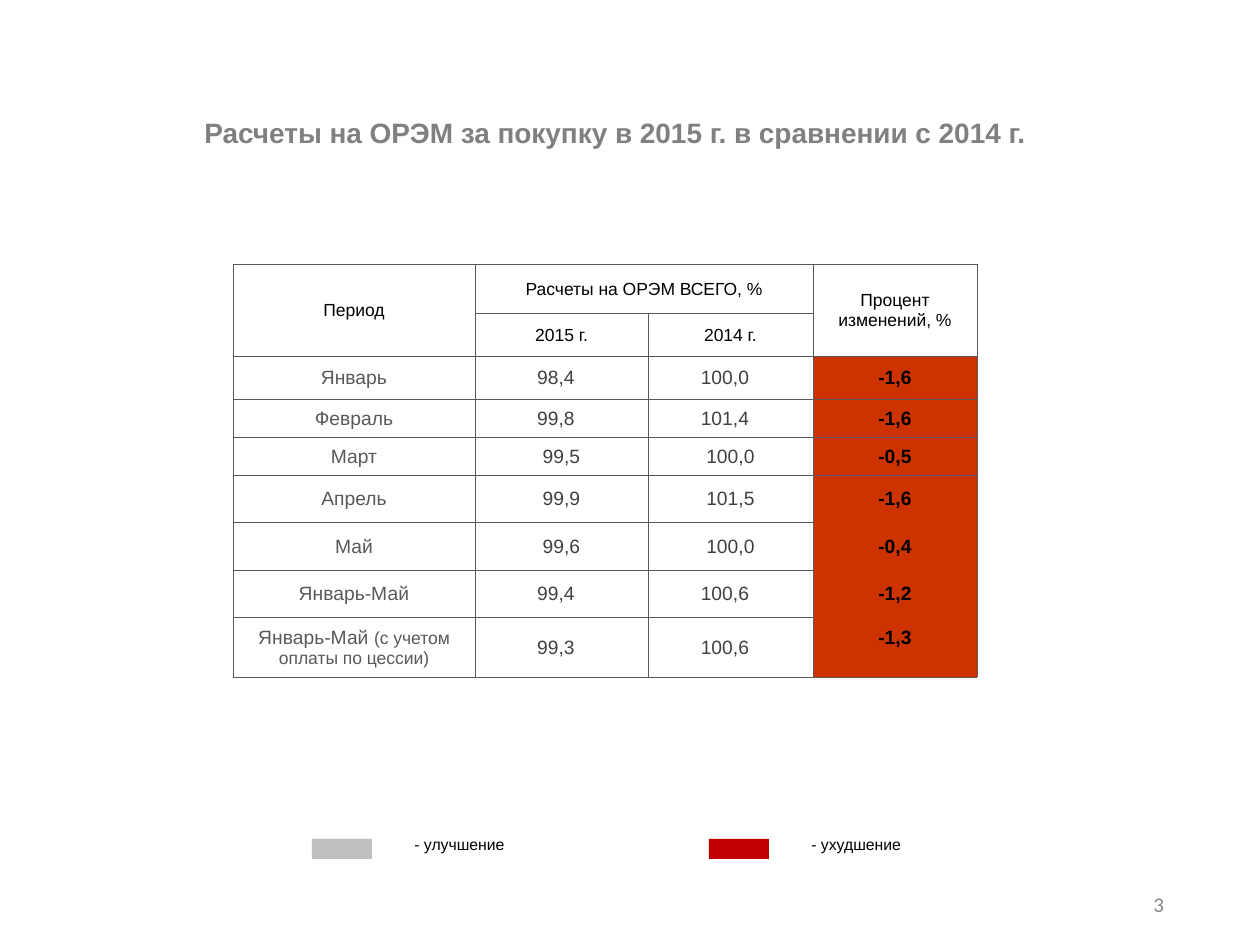
"""Build a slide comparing market purchase payments in 2015 and 2014."""
from dataclasses import dataclass
from lxml.etree import SubElement
from pptx import Presentation
from pptx.dml.color import RGBColor as RGB
from pptx.enum.shapes import MSO_SHAPE as SHAPE
from pptx.enum.text import MSO_ANCHOR as ANCHOR, PP_ALIGN as ALIGN
from pptx.oxml.ns import qn
from pptx.util import Emu, Pt

TITLE = "Расчеты на ОРЭМ за покупку в 2015 г. в сравнении с 2014 г."
NUMBER = "3"
HEADS = [
    ("Период", 0, 0, 1, 0),
    ("Расчеты на ОРЭМ ВСЕГО, %", 0, 1, 0, 2),
    ("Процент изменений, %", 0, 3, 1, 3),
    ("2015 г.", 1, 1, 1, 1),
    ("2014 г.", 1, 2, 1, 2),
]
ROWS = [
    ("Январь", "98,4", "100,0", "-1,6"),
    ("Февраль", "99,8", "101,4", "-1,6"),
    ("Март", "99,5", "100,0", "-0,5"),
    ("Апрель", "99,9", "101,5", "-1,6"),
    ("Май", "99,6", "100,0", "-0,4"),
    ("Январь-Май", "99,4", "100,6", "-1,2"),
    ("Январь-Май ", "99,3", "100,6", "-1,3"),
]
NOTE = "(с учетом оплаты по цессии)"
CENTRED = {"Март", "Апрель", "Май"}
LEGEND = [("- улучшение", 312, "BFBFBF"), ("- ухудшение", 709, "C00000")]
WIDTHS = [242, 173, 165, 164]
HEIGHTS = [49, 42, 43, 38, 38, 47, 48, 47, 60]
LEFT, TOP = 233, 264
OPEN = {(0, 0, "B"), (1, 0, "T"), (0, 3, "B"), (1, 3, "T"),
        (0, 1, "R"), (0, 2, "L")}
OPEN |= {(row, 3, "B") for row in (5, 6, 7)}
OPEN |= {(row, 3, "T") for row in (6, 7, 8)}


@dataclass(frozen=True)
class Theme:
    font: str = "Arial"
    plain: str = "Calibri"
    black: str = "000000"
    title: str = "808080"
    label: str = "595959"
    value: str = "404040"
    number: str = "898989"
    worse: str = "CC3300"
    big: int = 16
    page: int = 12
    body: int = 11
    head: int = 10
    small: int = 9


LOOK = Theme()


def px(count):
    return Emu(round(count * 914400 / 126))


def write(frame, text, size, color=LOOK.black, bold=False, align=ALIGN.CENTER,
          font=LOOK.font, space=None, more=None):
    para = frame.paragraphs[0]
    para.alignment = align
    para.line_spacing = space
    for part, points in [(text, size)] + (more or []):
        run = para.add_run()
        run.text = part
        run.font.name = font
        run.font.size = Pt(points)
        run.font.bold = bold
        run.font.color.rgb = RGB.from_string(color)


def add_box(slide, place, text, size, anchor=ANCHOR.TOP, right=13, **style):
    frame = slide.shapes.add_textbox(*map(px, place)).text_frame
    frame.word_wrap = True
    frame.vertical_anchor = anchor
    frame.margin_right = px(right)
    write(frame, text, size, **style)


def add_edges(cell, row, col):
    props = cell._tc.get_or_add_tcPr()
    for side in "LRTB":
        line = SubElement(props, qn(f"a:ln{side}"), w=str(Pt(0.25)))
        if (row, col, side) in OPEN:
            SubElement(line, qn("a:noFill"))
        else:
            fill = SubElement(line, qn("a:solidFill"))
            SubElement(fill, qn("a:srgbClr"), val=LOOK.label)


def set_cell(cell, text, size, right=1, bottom=0, **style):
    cell.vertical_anchor = ANCHOR.MIDDLE
    cell.margin_left = cell.margin_top = px(1)
    cell.margin_right, cell.margin_bottom = px(right), px(bottom)
    write(cell.text_frame, text, size, **style)


def add_grid(slide):
    place = LEFT, TOP, sum(WIDTHS), sum(HEIGHTS)
    grid = slide.shapes.add_table(
        len(HEIGHTS), len(WIDTHS), *map(px, place)).table
    grid.first_row = grid.horz_banding = False
    for col, width in zip(grid.columns, WIDTHS):
        col.width = px(width)
    for row, height in zip(grid.rows, HEIGHTS):
        row.height = px(height)
    for row in range(len(HEIGHTS)):
        for col in range(len(WIDTHS)):
            cell = grid.cell(row, col)
            add_edges(cell, row, col)
            if row > 1 and col == 3:
                cell.fill.solid()
                cell.fill.fore_color.rgb = RGB.from_string(LOOK.worse)
            else:
                cell.fill.background()
    for text, row, col, end, last in HEADS:
        cell = grid.cell(row, col)
        if (row, col) != (end, last):
            cell.merge(grid.cell(end, last))
        set_cell(cell, text, LOOK.head)
    for row, (name, new, old, change) in enumerate(ROWS, 2):
        final = row == len(HEIGHTS) - 1
        shift = 1 if name in CENTRED else 12
        set_cell(grid.cell(row, 0), name, LOOK.body, color=LOOK.label,
                 more=[(NOTE, LOOK.head)] if final else None)
        for col, value in enumerate((new, old), 1):
            set_cell(grid.cell(row, col), value, LOOK.body,
                     right=shift, color=LOOK.value)
        set_cell(grid.cell(row, 3), change, LOOK.body,
                 bottom=20 if final else 0, bold=True)


def add_legend(slide):
    for text, left, color in LEGEND:
        mark = slide.shapes.add_shape(
            SHAPE.RECTANGLE, *map(px, (left, 839, 60, 20)))
        mark.shadow.inherit = False
        mark.fill.solid()
        mark.fill.fore_color.rgb = RGB.from_string(color)
        mark.line.fill.background()
        add_box(slide, (left + 90, 829, 129, 32), text, LOOK.small,
                align=ALIGN.LEFT)


def main():
    deck = Presentation()
    deck.slide_width, deck.slide_height = px(1260), px(945)
    slide = deck.slides.add_slide(deck.slide_layouts[6])
    add_box(slide, (883, 879, 294, 50), NUMBER, LOOK.page, ANCHOR.MIDDLE,
            color=LOOK.number, align=ALIGN.RIGHT, font=LOOK.plain)
    add_box(slide, (134, 86, 912, 69), TITLE, LOOK.big, ANCHOR.BOTTOM, 20,
            color=LOOK.title, bold=True, align=ALIGN.RIGHT, space=1.5)
    add_legend(slide)
    add_grid(slide)
    deck.save("out.pptx")


if __name__ == "__main__":
    main()
